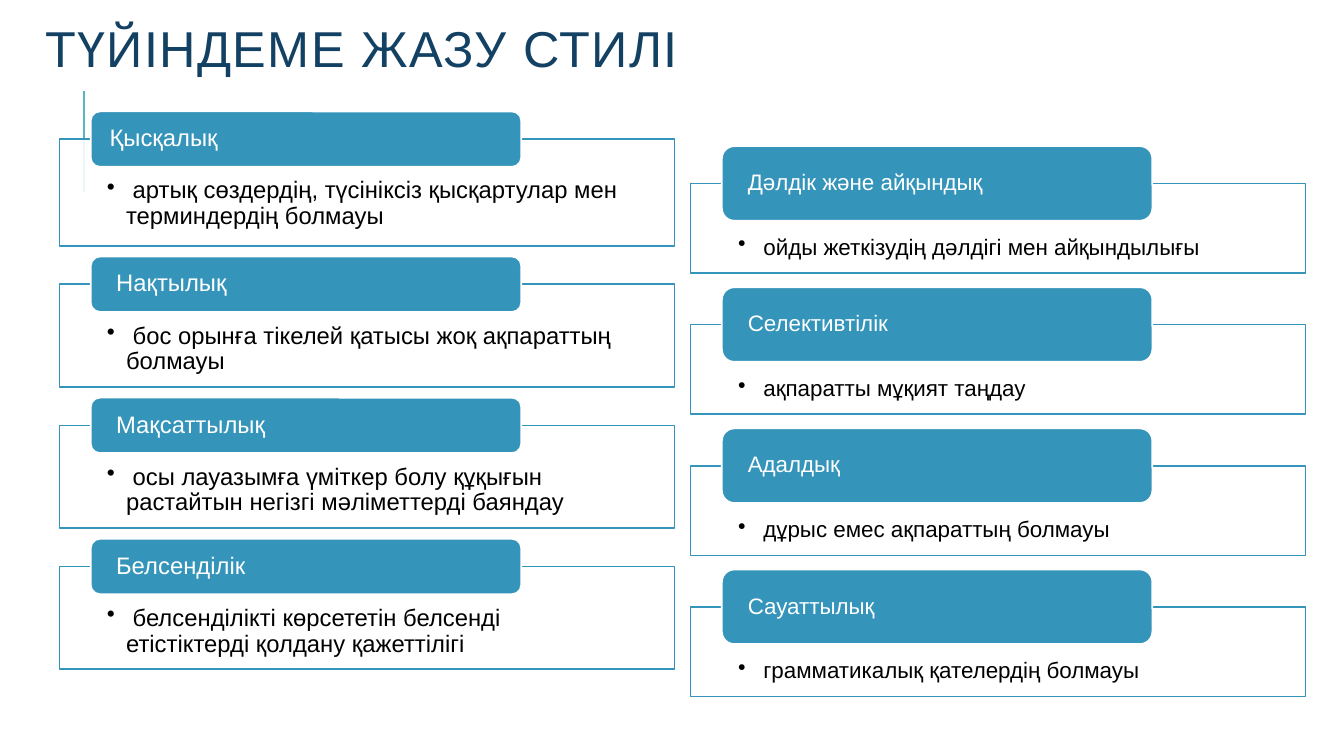
import pptx
import pptx.util
import pptx.dml.color
import pptx.enum.shapes
import pptx.enum.text
import pptx.oxml
import pptx.oxml.ns
from dataclasses import dataclass
from lxml import etree

Inches = pptx.util.Inches
Pt = pptx.util.Pt
Shape = pptx.enum.shapes.MSO_SHAPE
Anchor = pptx.enum.text.MSO_ANCHOR
qn = pptx.oxml.ns.qn


@dataclass(frozen=True)
class Theme:
    font: str = "Arial"
    navy: str = "134163"
    blue: str = "3494BA"
    teal: str = "58B6C0"
    white: str = "FFFFFF"
    black: str = "000000"
    head: int = 36
    left: int = 17
    right: int = 16
    rule: float = 1.5
    edge: float = 1.25


THEME = Theme()

# Heading, description, box height
LEFT = [
    ("Қысқалық", " артық сөздердің, түсініксіз қысқартулар мен терминдердің болмауы", 1.06),
    (" Нақтылық", " бос орынға тікелей қатысы жоқ ақпараттың болмауы", 1.02),
    (" Мақсаттылық", " осы лауазымға үміткер болу құқығын растайтын негізгі мәліметтерді баяндау", 1.02),
    (" Белсенділік", " белсенділікті көрсететін белсенді етістіктерді қолдану қажеттілігі", 1.02),
]
RIGHT = [
    (" Дәлдік және айқындық", " ойды жеткізудің дәлдігі мен айқындылығы", 0.89),
    (" Селективтілік", " ақпаратты мұқият таңдау", 0.89),
    (" Адалдық", " дұрыс емес ақпараттың болмауы", 0.89),
    (" Сауаттылық", " грамматикалық қателердің болмауы", 0.89),
]
PITCH = 1.4


def color(code):
    return pptx.dml.color.RGBColor.from_string(code)


def write(shape, text, size, ink, pads, anchor, space=0.9):
    """Put one left-aligned paragraph in a shape; pads are left, top, right, bottom."""
    frame = shape.text_frame
    frame.text = text
    frame.word_wrap = True
    frame.vertical_anchor = anchor
    (frame.margin_left, frame.margin_top,
     frame.margin_right, frame.margin_bottom) = map(Inches, pads)
    para = frame.paragraphs[0]
    para.alignment = pptx.enum.text.PP_ALIGN.LEFT
    para.line_spacing = space
    font = para.runs[0].font
    font.name, font.size = THEME.font, Pt(size)
    font.color.rgb = color(ink)
    return para


def block(slide, kind, box, fill, line):
    shape = slide.shapes.add_shape(kind, *map(Inches, box))
    shape.shadow.inherit = False
    shape.fill.solid()
    shape.fill.fore_color.rgb = color(fill)
    shape.line.color.rgb = color(line)
    shape.line.width = Pt(THEME.edge)
    return shape


def bullet(para):
    props = para._p.get_or_add_pPr()
    props.set("marL", str(Inches(0.19)))
    props.set("indent", str(-Inches(0.19)))
    etree.SubElement(props, qn("a:buChar")).set("char", "•")


def title(slide, x, y, w, h):
    box = slide.shapes.add_textbox(*map(Inches, (x, y, w, h)))
    para = write(box, "ТҮЙІНДЕМЕ ЖАЗУ СТИЛІ", THEME.head, THEME.navy,
                 (0.1, 0.05, 0.1, 0.05), Anchor.MIDDLE, 0.8)
    para.runs[0].font._element.set("spc", "100")


def rule(slide, x, top, end):
    line = slide.shapes.add_connector(
        pptx.enum.shapes.MSO_CONNECTOR.STRAIGHT, *map(Inches, (x, end, x, top)))
    line.line.color.rgb = color(THEME.teal)
    line.line.width = Pt(THEME.rule)
    etree.SubElement(line._element.spPr, qn("a:effectLst"))


def card(slide, x, y, w, h, tab, size, name, text, pads):
    # White frame, slightly see-through
    frame = block(slide, Shape.RECTANGLE, (x, y, w, h), THEME.white, THEME.blue)
    tint = frame._element.spPr.find(qn("a:solidFill"))[0]
    etree.SubElement(tint, qn("a:alpha")).set("val", "90000")
    bullet(write(frame, text, size, THEME.black, pads, Anchor.TOP))
    # Heading tab, centred on the top edge of the frame
    label = block(slide, Shape.ROUNDED_RECTANGLE,
                  (x + 0.31, y - tab / 2, w * 0.7, tab), THEME.blue, THEME.white)
    write(label, name, size, THEME.white, (0.16, 0, 0.16, 0), Anchor.MIDDLE)


def column(slide, x, base, w, rows, tab, size, pads):
    """Stack cards whose bottom edges are one pitch apart; base is the first."""
    for i, (name, text, h) in enumerate(rows):
        y = base + i * PITCH - h
        card(slide, x, y, w, h, tab, size, name, text, pads)


def main():
    deck = pptx.Presentation()
    deck.slide_width, deck.slide_height = Inches(13.33), Inches(7.5)
    slide = deck.slides.add_slide(deck.slide_layouts[6])
    rule(slide, 0.83, 0.9, 1.9)
    title(slide, 0.35, 0.2, 9, 0.65)
    column(slide, 0.59, 2.44, 6.1, LEFT, 0.55, THEME.left, (0.47, 0.39, 0.47, 0.13))
    column(slide, 6.85, 2.71, 6.1, RIGHT, 0.74, THEME.right, (0.47, 0.52, 0.47, 0.12))
    deck.save("out.pptx")


if __name__ == "__main__":
    main()
